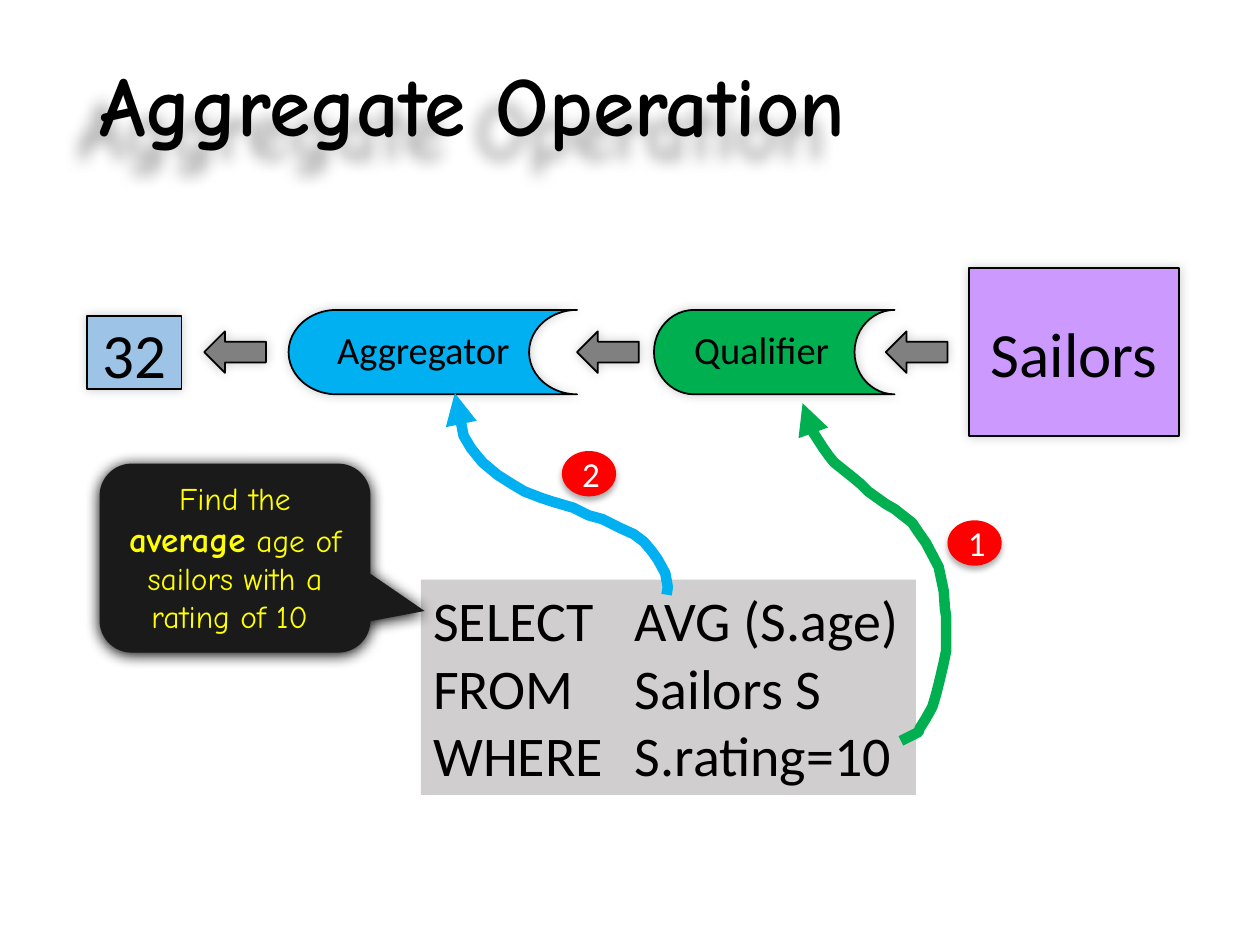
from lxml import etree
from pptx import Presentation
from pptx.dml.color import RGBColor
from pptx.enum.shapes import MSO_SHAPE
from pptx.enum.text import MSO_ANCHOR, PP_ALIGN
from pptx.oxml.ns import qn
from pptx.util import Inches, Pt

RECT = MSO_SHAPE.RECTANGLE
ARROW = MSO_SHAPE.LEFT_ARROW
STORE = MSO_SHAPE.FLOWCHART_STORED_DATA
BUBBLE = MSO_SHAPE.ROUNDED_RECTANGULAR_CALLOUT
OVAL = MSO_SHAPE.OVAL
TOP, MIDDLE = MSO_ANCHOR.TOP, MSO_ANCHOR.MIDDLE
LEFT, CENTER = PP_ALIGN.LEFT, PP_ALIGN.CENTER

BODY, HAND = "Calibri", "Comic Neue"
BLACK, WHITE, RED = "000000", "FFFFFF", "FF0000"
GREEN, BLUE = "00B050", "00B0F0"
SOFT = (20, 6, 0, 225)
DROP = (32, 3.5, 2.2, 90)
GLOW = (100, 8.5, 1, 90)
CAST = (35, 9, 18, 135)
PAD = (0.1, 0.05, 0.1, 0.05)

GREEN_PATH = [
    (7.15, 5.88), (7.23, 5.84), (7.29, 5.81), (7.3, 5.78), (7.35, 5.7),
    (7.4, 5.61), (7.43, 5.51), (7.46, 5.39), (7.49, 5.26), (7.51, 5.16),
    (7.51, 5.01), (7.51, 4.9), (7.5, 4.83), (7.49, 4.69), (7.45, 4.5),
    (7.35, 4.31), (7.28, 4.21), (7.24, 4.15), (7.1, 4.04), (7.03, 4),
    (6.89, 3.9), (6.83, 3.84), (6.77, 3.79), (6.62, 3.67), (6.58, 3.62),
    (6.53, 3.55), (6.44, 3.41), (6.42, 3.36), (6.39, 3.31), (6.37, 3.2),
]
BLUE_PATH = [
    (5.29, 4.72), (5.3, 4.66), (5.28, 4.55), (5.22, 4.44), (5.17, 4.37),
    (5.11, 4.3), (5.03, 4.24), (4.92, 4.19), (4.78, 4.12), (4.67, 4.09),
    (4.55, 4.03), (4.38, 3.98), (4.29, 3.95), (4.16, 3.9), (4.06, 3.84),
    (3.95, 3.77), (3.83, 3.67), (3.74, 3.56), (3.68, 3.46), (3.66, 3.36),
    (3.63, 3.26), (3.61, 3.15), (3.61, 3.12),
]


def color(code):
    return RGBColor.from_string(code)


class Board:
    def __init__(self, deck):
        self.slide = deck.slides.add_slide(deck.slide_layouts[5])

    def shade(self, shape, look):
        shape.shadow.inherit = False
        if look:
            alpha, blur, dist, angle = look
            effects = shape._element.spPr.find(qn("a:effectLst"))
            outer = etree.SubElement(
                effects, qn("a:outerShdw"), blurRad=str(Pt(blur)),
                dist=str(Pt(dist)), dir=str(angle * 60000),
                algn="ctr", rotWithShape="0")
            tone = etree.SubElement(outer, qn("a:srgbClr"), val=BLACK)
            etree.SubElement(tone, qn("a:alpha"), val=str(alpha * 1000))

    def run(self, para, text, size, font=BODY, ink=BLACK, bold=False):
        run = para.add_run()
        run.text = text
        run.font.size = Pt(size)
        run.font.name = font
        run.font.bold = bold
        run.font.color.rgb = color(ink)

    def title(self, text, box):
        shape = self.slide.shapes.title
        shape.left, shape.top, shape.width, shape.height = map(Inches, box)
        shape.text_frame.vertical_anchor = MIDDLE
        para = shape.text_frame.paragraphs[0]
        para.alignment = LEFT
        para.line_spacing = 0.9
        self.run(para, text, 48, HAND, BLACK, True)
        self.shade(shape, CAST)

    def shape(self, kind, box, fill, line=None, look=None):
        shape = self.slide.shapes.add_shape(kind, *map(Inches, box))
        shape.fill.solid()
        shape.fill.fore_color.rgb = color(fill)
        if line:
            shape.line.color.rgb = color(line)
            shape.line.width = Pt(1)
        else:
            shape.line.fill.background()
        self.shade(shape, look)
        return shape

    def label(self, shape, rows, align=CENTER, anchor=MIDDLE, pad=PAD, tab=None):
        frame = shape.text_frame
        frame.word_wrap = True
        frame.vertical_anchor = anchor
        (frame.margin_left, frame.margin_top,
         frame.margin_right, frame.margin_bottom) = map(Inches, pad)
        for i, row in enumerate(rows):
            para = frame.add_paragraph() if i else frame.paragraphs[0]
            para.alignment = align
            if tab:
                stops = etree.SubElement(para._p.get_or_add_pPr(), qn("a:tabLst"))
                etree.SubElement(stops, qn("a:tab"), pos=str(Inches(tab)), algn="l")
            for part in row:
                self.run(para, *part)

    def node(self, kind, box, fill, text, size, pad=PAD):
        shape = self.shape(kind, box, fill, BLACK, SOFT)
        self.label(shape, [[(text, size)]], pad=pad)

    def arrow(self, left):
        self.shape(ARROW, (left, 2.63, 0.49, 0.33), "808080", BLACK, SOFT)

    def badge(self, text, left, top):
        shape = self.shape(OVAL, (left, top, 0.43, 0.36), RED, look=DROP)
        self.label(shape, [[(text, 20, BODY, WHITE)]])

    def trail(self, points, ink):
        first, *rest = [(Inches(x), Inches(y)) for x, y in points]
        trace = self.slide.shapes.build_freeform(*first)
        trace.add_line_segments(rest, close=False)
        shape = trace.convert_to_shape()
        shape.fill.background()
        shape.line.color.rgb = color(ink)
        shape.line.width = Pt(6)
        line = shape._element.spPr.find(qn("a:ln"))
        etree.SubElement(line, qn("a:round"))
        etree.SubElement(line, qn("a:tailEnd"), type="triangle")
        self.shade(shape, None)


def main():
    deck = Presentation()
    deck.slide_width, deck.slide_height = Inches(10), Inches(7.5)
    board = Board(deck)
    board.title("Aggregate Operation", (0.69, 0.4, 8.62, 0.94))

    board.node(RECT, (7.69, 2.13, 1.67, 1.33), "CC99FF", "Sailors", 36)
    board.node(STORE, (5.19, 2.46, 1.91, 0.67), GREEN, "Qualifier", 22,
               (0, 0, 0.2, 0.05))
    board.node(STORE, (2.29, 2.46, 2.29, 0.67), BLUE, "Aggregator", 22,
               (0, 0, 0.15, 0.05))
    board.node(RECT, (0.69, 2.51, 0.75, 0.58), "9DC3E6", "32", 36)
    for left in (7.03, 4.58, 1.62):
        board.arrow(left)

    query = board.shape(RECT, (3.34, 4.6, 3.93, 1.71), "D0CECE")
    lines = [("SELECT", "AVG (S.age)"), ("FROM", "Sailors S"),
             ("WHERE", "S.rating=10")]
    board.label(query, [[(f"{key}\t{value}", 32)] for key, value in lines],
                LEFT, TOP, tab=1.6)

    note = board.shape(BUBBLE, (0.79, 3.68, 2.15, 1.5), "1A1A1A", look=GLOW)
    for i, value in enumerate((0.7, 0.28, 0.17)):
        note.adjustments[i] = value
    yellow = (HAND, "FFFF00")
    board.label(note, [[("Find the ", 18, *yellow),
                        ("average", 20, *yellow, True),
                        (" age of sailors with a rating of 10 ", 18, *yellow)]],
                anchor=TOP)

    board.trail(GREEN_PATH, GREEN)
    board.trail(BLUE_PATH, BLUE)
    board.badge("2", 4.46, 3.58)
    board.badge("1", 7.52, 4.13)
    deck.save("out.pptx")


if __name__ == "__main__":
    main()
